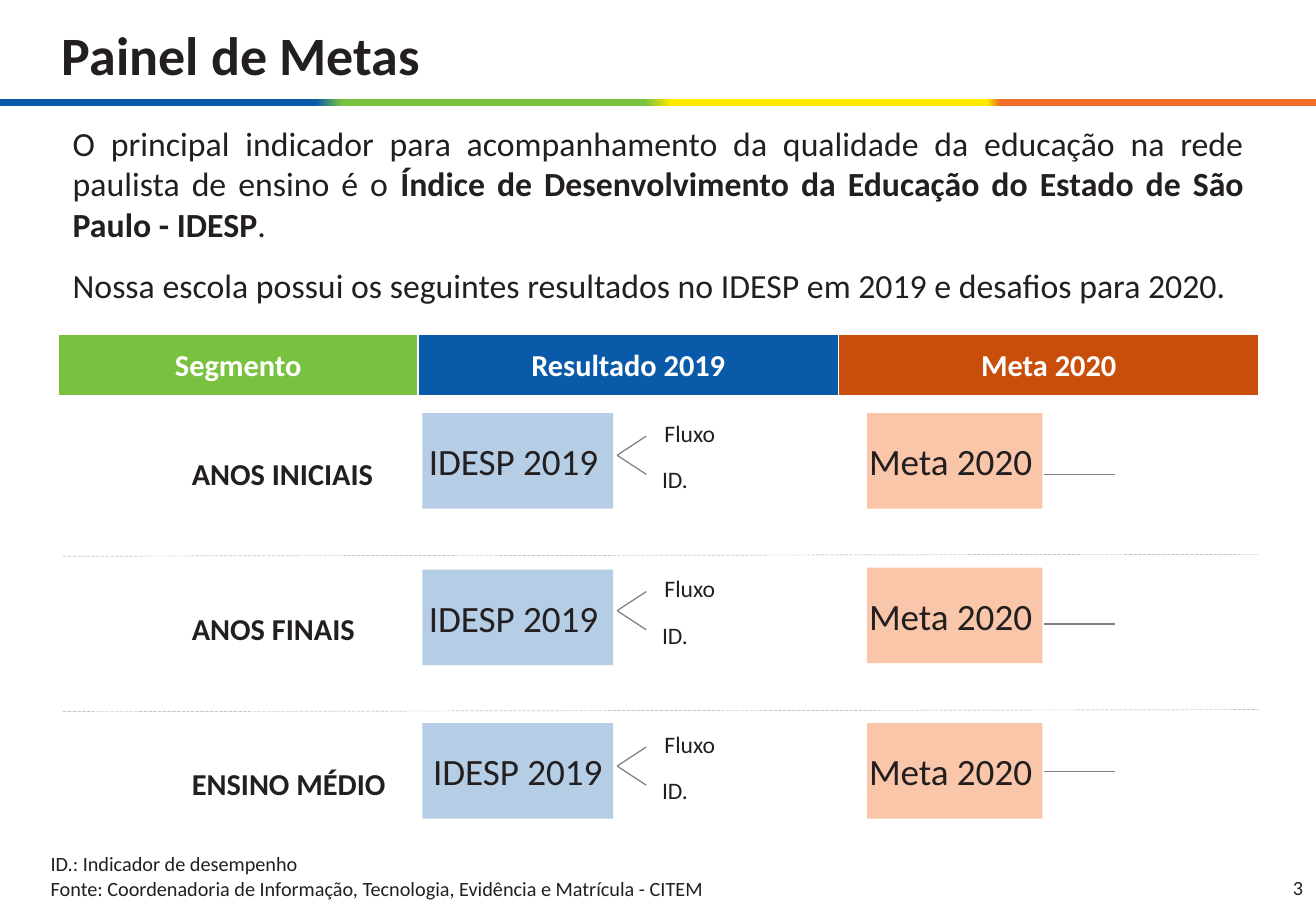
from lxml.etree import SubElement
from pptx import Presentation
from pptx.dml.color import RGBColor
from pptx.enum.dml import MSO_LINE
from pptx.enum.shapes import MSO_CONNECTOR, MSO_SHAPE
from pptx.enum.text import MSO_ANCHOR as Anchor, MSO_AUTO_SIZE as AutoSize, PP_ALIGN as Align
from pptx.oxml.ns import qn
from pptx.util import Cm, Pt

COLORS = {
    "ink": "231F20",
    "white": "FFFFFF",
    "blue": "0A5AAA",
    "green": "78C240",
    "yellow": "FFEA01",
    "orange": "F37029",
    "rust": "CA4E0B",
    "peach": "FAC6A9",
    "gray": "808080",
    "light_gray": "A6A6A6",
}
FONT = "Calibri"
SLIDE_WIDTH, SLIDE_HEIGHT = 27.51, 19.05
ROW_PITCH = 3.25

STRIPE = [
    (0, "blue"), (24, "blue"), (26, "green"), (49, "green"),
    (51, "yellow"), (75, "yellow"), (76, "orange"), (100, "orange"),
]
HEADERS = [
    ("Segmento", "green", 7.52),
    ("Resultado 2019", "blue", 8.79),
    ("Meta 2020", "rust", 8.79),
]
SEGMENTS = [
    {"name": "ANOS INICIAIS", "result": "IDESP 2019 ", "result_top": 8.64, "goal_top": 8.64, "goal_line": 9.92},
    {"name": "ANOS FINAIS", "result": "IDESP 2019 ", "result_top": 11.91, "goal_top": 11.87, "goal_line": 13.05},
    {"name": "ENSINO MÉDIO", "result": "IDESP 2019", "result_top": 15.12, "goal_top": 15.12, "goal_line": 16.13},
]
INTRO = [
    [
        ("O principal indicador para acompanhamento da qualidade da educação na rede "
         "paulista de ensino é o ", False),
        ("Índice de Desenvolvimento da Educação do Estado de São Paulo - IDESP", True),
        (".", False),
    ],
    [("Nossa escola possui os seguintes resultados no IDESP em 2019 e desafios para 2020.", False)],
]
NOTES = [
    [("ID.: Indicador de desempenho", False)],
    [("Fonte: Coordenadoria de Informação, Tecnologia, Evidência e Matrícula - CITEM", False)],
]


def rgb(color):
    return RGBColor.from_string(COLORS[color])


def apply(target, values):
    for name, value in values.items():
        setattr(target, name, value)


def write(frame, paragraphs, size, color="ink", align=Align.LEFT, gap=0, **frame_format):
    apply(frame, {"word_wrap": True, "auto_size": AutoSize.NONE, **frame_format})
    for index, runs in enumerate(paragraphs):
        paragraph = frame.add_paragraph() if index else frame.paragraphs[0]
        apply(paragraph, {"alignment": align, "space_before": Pt(gap if index else 0)})
        for text, bold in runs:
            run = paragraph.add_run()
            run.text = text
            apply(run.font, {"name": FONT, "size": Pt(size), "bold": bold})
            run.font.color.rgb = rgb(color)


def add_text(slide, box, paragraphs, size, **text_format):
    frame = slide.shapes.add_textbox(*map(Cm, box)).text_frame
    write(frame, paragraphs, size, **text_format)


def add_box(slide, box, color, opacity=100):
    rectangle = slide.shapes.add_shape(MSO_SHAPE.RECTANGLE, *map(Cm, box))
    rectangle.shadow.inherit = False
    rectangle.line.fill.background()
    rectangle.fill.solid()
    rectangle.fill.fore_color.rgb = rgb(color)
    if opacity < 100:
        tint = rectangle._element.spPr.find(qn("a:solidFill")).find(qn("a:srgbClr"))
        SubElement(tint, qn("a:alpha"), val=str(opacity * 1000))
    return rectangle


def add_value_box(slide, box, text, color, opacity=100):
    value = add_box(slide, box, color, opacity)
    margins = {f"margin_{side}": 0 for side in ("left", "top", "right", "bottom")}
    write(value.text_frame, [[(text, False)]], 22, align=Align.CENTER,
          vertical_anchor=Anchor.MIDDLE, **margins)


def add_line(slide, ends, color="gray", width=0.75, dash=None):
    line = slide.shapes.add_connector(MSO_CONNECTOR.STRAIGHT, *map(Cm, ends))
    line.line.color.rgb = rgb(color)
    apply(line.line, {"width": Pt(width), "dash_style": dash})
    SubElement(line._element.spPr, qn("a:effectLst"))


def add_stripe(slide):
    stripe = add_box(slide, (0, 2.07, SLIDE_WIDTH, 0.15), "blue")
    stripe.fill.gradient()
    stripe.fill.gradient_angle = 0
    stops = stripe._element.spPr.find(qn("a:gradFill")).find(qn("a:gsLst"))
    for stop in list(stops):
        stops.remove(stop)
    for position, color in STRIPE:
        stop = SubElement(stops, qn("a:gs"), pos=str(position * 1000))
        SubElement(stop, qn("a:srgbClr"), val=COLORS[color])


def add_title(slide):
    title = slide.shapes.title
    apply(title, dict(zip(("left", "top", "width", "height"), map(Cm, (1.04, 0.13, 21.49, 2)))))
    write(title.text_frame, [[("Painel de Metas", True)]], 32, vertical_anchor=Anchor.MIDDLE)


def add_borders(cell):
    properties = cell._tc.get_or_add_tcPr()
    for side, width in (("L", 1), ("R", 1), ("T", 1), ("B", 3)):
        border = SubElement(properties, qn(f"a:ln{side}"), w=str(Pt(width)))
        SubElement(SubElement(border, qn("a:solidFill")), qn("a:srgbClr"), val=COLORS["white"])


def add_header_table(slide):
    width = sum(column[2] for column in HEADERS)
    table = slide.shapes.add_table(1, len(HEADERS), Cm(1.22), Cm(7), Cm(width), Cm(1.3)).table
    for index, (heading, color, column_width) in enumerate(HEADERS):
        table.columns[index].width = Cm(column_width)
        cell = table.cell(0, index)
        add_borders(cell)
        cell.fill.solid()
        cell.fill.fore_color.rgb = rgb(color)
        cell.vertical_anchor = Anchor.MIDDLE
        write(cell.text_frame, [[(heading, True)]], 18, color="white", align=Align.CENTER)


def add_segment(slide, index, segment):
    shift = index * ROW_PITCH
    middle = {"vertical_anchor": Anchor.MIDDLE}
    add_text(slide, (3.76, 8.89 + shift, 5.77, 2), [[(segment["name"], True)]], 18, **middle)
    add_value_box(slide, (8.83, segment["result_top"], 3.99, 2), segment["result"], "blue", 30)
    add_value_box(slide, (18.13, segment["goal_top"], 3.66, 2), "Meta 2020 ", "peach")
    add_line(slide, (21.82, segment["goal_line"], 23.31, segment["goal_line"]))

    fork = 9.52 + shift
    for part, left, top, rise in (("Fluxo", 13.64, 8.56, -0.4), ("ID.", 13.59, 9.53, 0.4)):
        add_line(slide, (12.9, fork, 13.51, fork + rise))
        add_text(slide, (left, top + shift, 1.8, 0.99), [[(part, False)]], 14, **middle)


def add_divider(slide, index):
    left_end = 11.63 + index * ROW_PITCH
    add_line(slide, (1.32, left_end, 26.31, left_end - 0.04), "light_gray", 0.25, MSO_LINE.LONG_DASH)


def main():
    presentation = Presentation()
    apply(presentation, {"slide_width": Cm(SLIDE_WIDTH), "slide_height": Cm(SLIDE_HEIGHT)})
    slide = presentation.slides.add_slide(presentation.slide_layouts[5])

    add_stripe(slide)
    add_title(slide)
    add_text(slide, (1.27, 2.44, 24.99, 3.99), INTRO, 20, align=Align.JUSTIFY, gap=12)
    add_header_table(slide)
    for index, segment in enumerate(SEGMENTS):
        add_segment(slide, index, segment)
    for index in range(len(SEGMENTS) - 1):
        add_divider(slide, index)
    add_text(slide, (0.81, 17.45, 18.08, 1.5), NOTES, 12, vertical_anchor=Anchor.BOTTOM)
    add_text(slide, (25.76, 18.06, 1.73, 0.99), [[("3", False)]], 12,
             align=Align.RIGHT, vertical_anchor=Anchor.MIDDLE)

    presentation.save("out.pptx")


if __name__ == "__main__":
    main()
